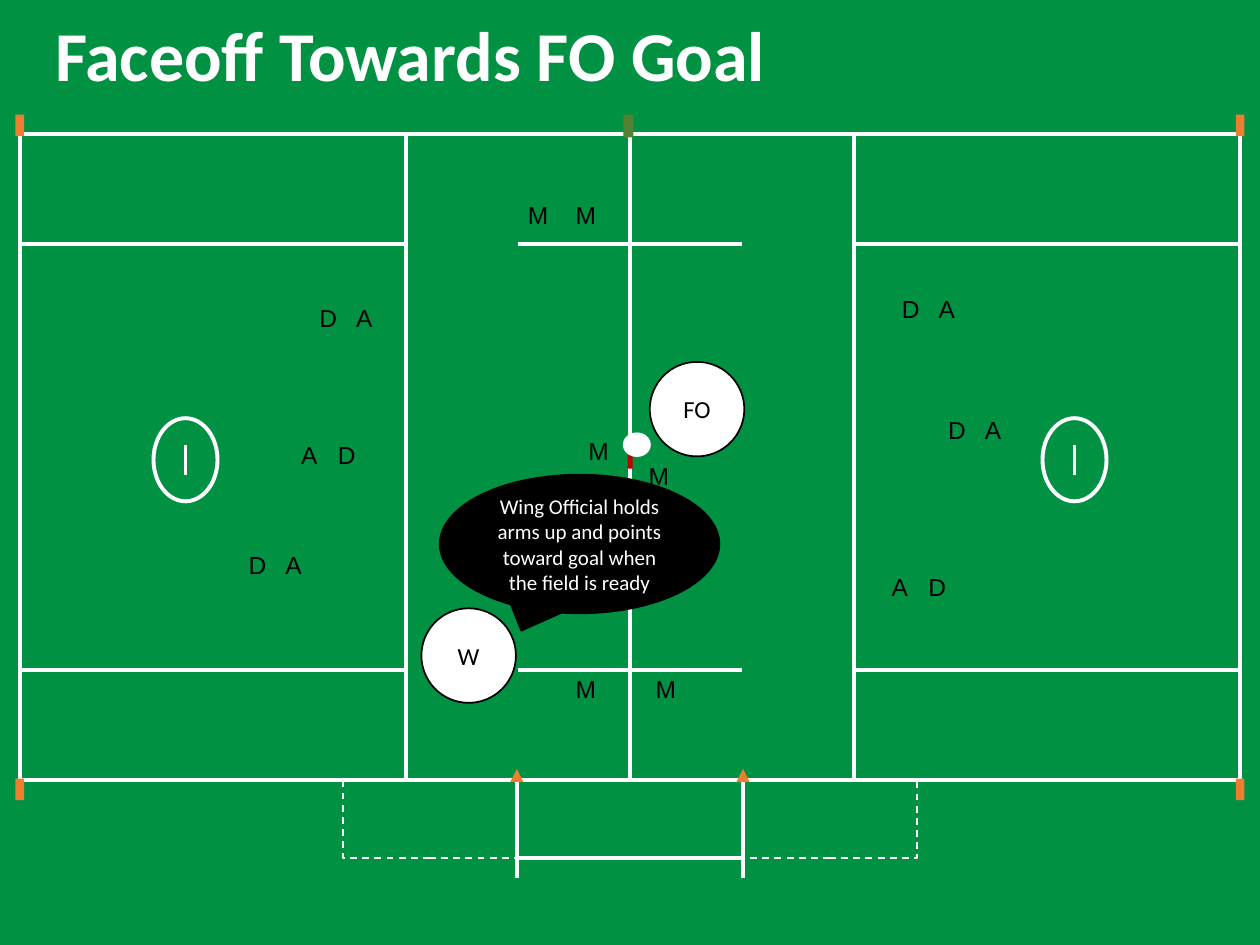
from lxml import etree
from pptx import Presentation
from pptx.dml.color import RGBColor
from pptx.enum.dml import MSO_LINE
from pptx.enum.shapes import MSO_CONNECTOR, MSO_SHAPE
from pptx.enum.text import MSO_ANCHOR, PP_ALIGN
from pptx.oxml.ns import qn
from pptx.util import Pt

RECTANGLE, OVAL = MSO_SHAPE.RECTANGLE, MSO_SHAPE.OVAL
CALLOUT = MSO_SHAPE.OVAL_CALLOUT
STRAIGHT = MSO_CONNECTOR.STRAIGHT
DASH = MSO_LINE.DASH
TOP, MIDDLE = MSO_ANCHOR.TOP, MSO_ANCHOR.MIDDLE
LEFT, CENTER = PP_ALIGN.LEFT, PP_ALIGN.CENTER

WIDTH, HEIGHT = 720, 540
COLORS = {
    "grass": "009242", "white": "FFFFFF", "black": "000000",
    "orange": "ED7D31", "marker": "548235", "red": "C00000",
}
FIELD_LINE = 2.25
PAIR_GAP = 21

# Field landmarks, for the left half and the centre
SIDELINE_X, RESTRAINING_X, BOX_X, MIDFIELD_X = 11.5, 232, 295.4, WIDTH / 2
FAR_Y, UPPER_Y, LOWER_Y, NEAR_Y, BENCH_Y = 76.5, 139.5, 383, 445.8, 490.5
GOAL_X = 106


def color(name):
    return RGBColor.from_string(COLORS[name])


def write(shape, text, font="Calibri", size=14, ink="black", bold=False,
          align=LEFT, anchor=TOP, tab=None):
    frame = shape.text_frame
    frame.word_wrap = True
    frame.vertical_anchor = anchor
    para = frame.paragraphs[0]
    para.alignment = align
    if tab:
        stops = etree.SubElement(para._p.get_or_add_pPr(), qn("a:tabLst"))
        etree.SubElement(stops, qn("a:tab"), pos=str(Pt(tab)), algn="l")
    span = para.add_run()
    span.text = text
    span.font.name = font
    span.font.size = Pt(size)
    span.font.bold = bold
    span.font.color.rgb = color(ink)


class FieldPage:
    """Draws on one slide; mirror=True reflects an element across midfield."""

    def __init__(self, deck):
        self.page = deck.slides.add_slide(deck.slide_layouts[6])
        self.shapes = self.page.shapes
        fill = self.page.background.fill
        fill.solid()
        fill.fore_color.rgb = color("grass")

    def paint(self, shape, fill, line, weight, dash=None):
        shape.shadow.inherit = False
        if fill:
            shape.fill.solid()
            shape.fill.fore_color.rgb = color(fill)
        else:
            shape.fill.background()
        if line:
            shape.line.color.rgb = color(line)
            shape.line.width = Pt(weight)
            if dash:
                shape.line.dash_style = dash
        else:
            shape.line.fill.background()

    def shape(self, kind, x, y, width, height, fill=None, line=None,
              weight=1, dash=None, mirror=False):
        left = WIDTH - x - width if mirror else x
        shape = self.shapes.add_shape(kind, Pt(left), Pt(y), Pt(width), Pt(height))
        self.paint(shape, fill, line, weight, dash)
        return shape

    def area(self, left, top, right, bottom, mirror):
        self.shape(RECTANGLE, left, top, right - left, bottom - top,
                   line="white", weight=FIELD_LINE, mirror=mirror)

    def line(self, x1, y1, x2, y2, weight=FIELD_LINE, mirror=False):
        if mirror:
            x1, x2 = WIDTH - x1, WIDTH - x2
        line = self.shapes.add_connector(STRAIGHT, Pt(x1), Pt(y1), Pt(x2), Pt(y2))
        line.line.color.rgb = color("white")
        line.line.width = Pt(weight)
        etree.SubElement(line._element.spPr, qn("a:effectLst"))

    def cone(self, x, top, mirror):
        center = WIDTH - x if mirror else x
        corners = [(center - 3.8, top + 7.5), (center + 3.8, top + 7.5)]
        builder = self.shapes.build_freeform(Pt(center), Pt(top))
        builder.add_line_segments([(Pt(x), Pt(y)) for x, y in corners])
        self.paint(builder.convert_to_shape(), "orange", None, 0)

    def label(self, text, x, y, width, height=24.2, **style):
        box = self.shapes.add_textbox(Pt(x), Pt(y), Pt(width), Pt(height))
        write(box, text, **style)

    def official(self, text, x, y):
        circle = self.shape(OVAL, x, y, 54, 54, "white", "black")
        write(circle, text, align=CENTER, anchor=MIDDLE)

    def half_field(self, mirror):
        self.area(RESTRAINING_X, FAR_Y, MIDFIELD_X, NEAR_Y, mirror)
        rows = [FAR_Y, UPPER_Y, LOWER_Y, NEAR_Y]
        for top, bottom in zip(rows, rows[1:]):
            self.area(SIDELINE_X, top, RESTRAINING_X, bottom, mirror)
        for y in (65.5, 445):
            self.shape(RECTANGLE, 8.8, y, 5, 12.3, "orange", mirror=mirror)
        self.shape(RECTANGLE, 196, NEAR_Y, BOX_X - 196, BENCH_Y - NEAR_Y,
                   line="white", dash=DASH, mirror=mirror)
        self.shape(OVAL, GOAL_X - 18.3, 239, 36.6, 47.5,
                   line="white", weight=FIELD_LINE, mirror=mirror)
        self.line(GOAL_X, 271.2, GOAL_X, 254.2, 1.5, mirror)
        self.line(BOX_X, 502, BOX_X, 447, mirror=mirror)
        for y in (UPPER_Y, LOWER_Y, BENCH_Y):
            self.line(MIDFIELD_X, y, 296, y, mirror=mirror)
        self.cone(BOX_X, 439.4, mirror)


def main():
    deck = Presentation()
    deck.slide_width, deck.slide_height = Pt(WIDTH), Pt(HEIGHT)
    field = FieldPage(deck)

    for mirror in (False, True):
        field.half_field(mirror)
    field.shape(RECTANGLE, 356.2, 65.5, 5.7, 13, "marker")
    field.shape(RECTANGLE, 358.6, 257, 2.9, 10.8, "red")

    field.label("Faceoff Towards FO Goal", 24.5, 16.6, 422.6, 28,
                size=40, ink="white", bold=True, anchor=MIDDLE)
    field.official("FO", 371.3, 206.8)
    field.official("W", 240.8, 347.6)

    pairs = [
        ("D\tA", 175.5, 169.5), ("A\tD", 165, 247.7), ("D\tA", 135, 311),
        ("D\tA", 534.7, 233.7), ("A\tD", 502.4, 323.3), ("D\tA", 508.3, 164.7),
    ]
    for text, x, y in pairs:
        field.label(text, x, y, 52.6, font="Arial", tab=PAIR_GAP)

    midfielders = [(294.5, 111), (321.8, 111), (367.5, 381.7), (321.8, 381.7),
                   (329.2, 245.7), (363.6, 260)]
    for x, y in midfielders:
        field.label("M", x, y, 34.6, font="Arial")

    field.shape(OVAL, 356.4, 247.6, 15, 13, "white", "white")
    callout = field.shape(CALLOUT, 251.3, 271.3, 159.8, 79.2, "black", "black")
    write(callout,
          "Wing Official holds arms up and points toward goal when the field is ready",
          size=12, ink="white", align=CENTER, anchor=MIDDLE)

    deck.save("out.pptx")


if __name__ == "__main__":
    main()
